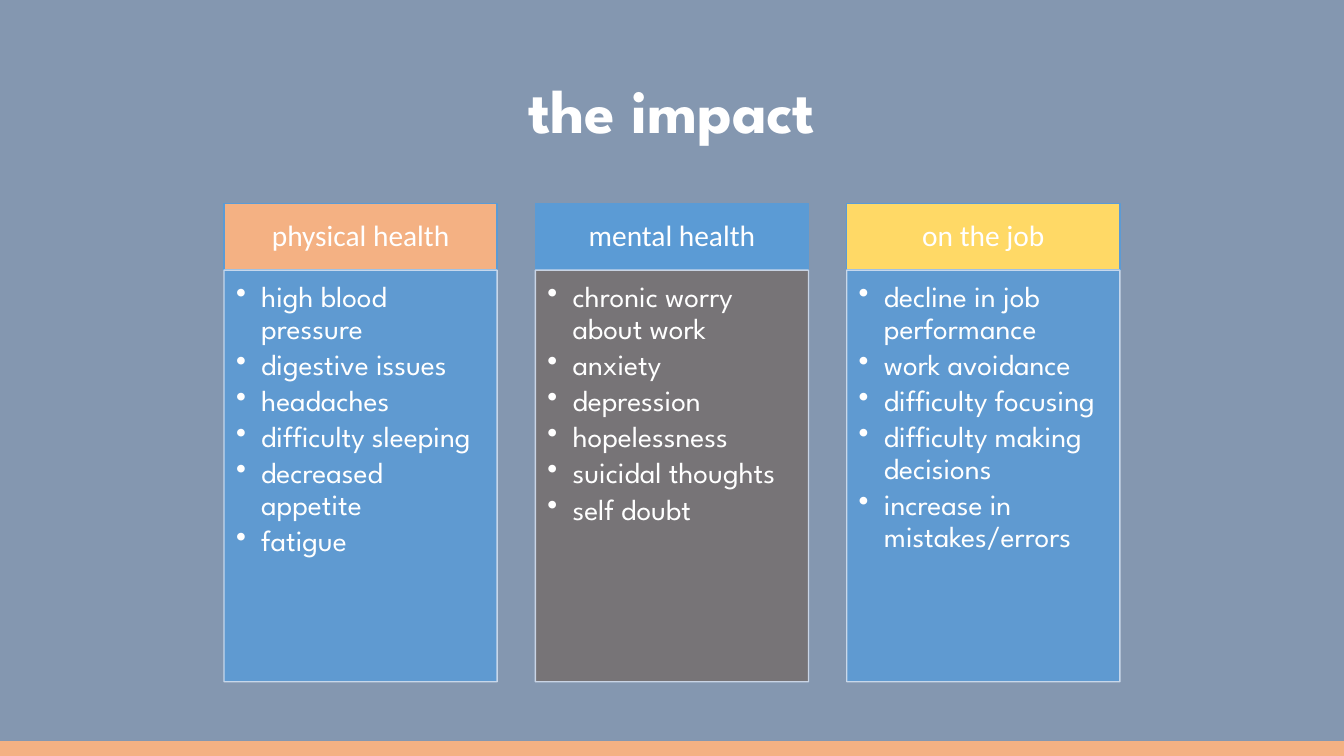
import pptx
import pptx.dml.color
import pptx.enum.shapes
import pptx.enum.text
import pptx.oxml
import pptx.oxml.ns
import pptx.util
from pptx.util import Pt

COLORS = {
    "background": "8497B0",
    "text": "FFFFFF",
    "orange": "F4B183",
    "blue": "5B9BD5",
    "yellow": "FFD966",
    "gray": "767171",
    "pale": "D2DEEF",
}
HEADING_FONT = "Calibri"
BODY_FONT = "League Spartan"

SLIDE_WIDTH, SLIDE_HEIGHT = 960, 540
COLUMN_LEFT, COLUMN_WIDTH, COLUMN_PITCH = 160, 195.1, 222.4
HEADING_TOP, HEADING_HEIGHT = 145.5, 47.5
LIST_HEIGHT = 294
INDENT = 18

IMPACTS = [
    ("physical health", "orange", "blue",
     ["high blood pressure", "digestive issues", "headaches",
      "difficulty sleeping", "decreased appetite", "fatigue"]),
    ("mental health", "blue", "gray",
     ["chronic worry about work", "anxiety", "depression",
      "hopelessness", "suicidal thoughts", "self doubt"]),
    ("on the job", "yellow", "blue",
     ["decline in job performance", "work avoidance", "difficulty focusing",
      "difficulty making decisions", "increase in mistakes/errors"]),
]


def rgb(name):
    return pptx.dml.color.RGBColor.from_string(COLORS[name])


def set_opacity(fill_parent, percent):
    """Make the solid colour under an XML element partly transparent."""
    color = fill_parent.find(pptx.oxml.ns.qn("a:solidFill"))[0]
    color.append(pptx.oxml.parse_xml(
        f'<a:alpha {pptx.oxml.ns.nsdecls("a")} val="{percent * 1000}"/>'))


def add_bullet(paragraph):
    properties = paragraph._p.get_or_add_pPr()
    properties.set("marL", str(Pt(INDENT)))
    properties.set("indent", str(-Pt(INDENT)))
    properties.append(pptx.oxml.parse_xml(
        f'<a:buChar {pptx.oxml.ns.nsdecls("a")} char="•"/>'))


def format_paragraph(paragraph, font_name, size, align, space_after=0, bold=False):
    paragraph.alignment = align
    paragraph.line_spacing = 0.9
    paragraph.space_after = Pt(space_after)
    for run in paragraph.runs:
        run.font.name = font_name
        run.font.size = Pt(size)
        run.font.bold = bold
        run.font.color.rgb = rgb("text")


def set_margins(frame, left, top, right, bottom):
    frame.margin_left, frame.margin_top = Pt(left), Pt(top)
    frame.margin_right, frame.margin_bottom = Pt(right), Pt(bottom)


def add_box(slide, left, top, width, height, fill, line):
    box = slide.shapes.add_shape(
        pptx.enum.shapes.MSO_SHAPE.RECTANGLE,
        Pt(left), Pt(top), Pt(width), Pt(height))
    box.shadow.inherit = False
    box.fill.solid()
    box.fill.fore_color.rgb = rgb(fill)
    box.line.color.rgb = rgb(line)
    box.line.width = Pt(1)
    return box


def add_title(slide, text):
    title = slide.shapes.title
    title.left, title.top = Pt(66), Pt(28.75)
    title.width, title.height = Pt(828), Pt(104.4)
    title.text_frame.text = text
    title.text_frame.vertical_anchor = pptx.enum.text.MSO_ANCHOR.MIDDLE
    format_paragraph(title.text_frame.paragraphs[0], BODY_FONT, 44,
                     pptx.enum.text.PP_ALIGN.CENTER, bold=True)


def add_heading(slide, left, text, fill):
    heading = add_box(slide, left, HEADING_TOP, COLUMN_WIDTH, HEADING_HEIGHT,
                      fill, "blue")
    frame = heading.text_frame
    frame.text = text
    frame.vertical_anchor = pptx.enum.text.MSO_ANCHOR.MIDDLE
    set_margins(frame, 11.5, 6.5, 11.5, 6.5)
    format_paragraph(frame.paragraphs[0], HEADING_FONT, 21,
                     pptx.enum.text.PP_ALIGN.CENTER, space_after=7.35)


def add_list(slide, left, items, fill):
    panel = add_box(slide, left, HEADING_TOP + HEADING_HEIGHT, COLUMN_WIDTH,
                    LIST_HEIGHT, fill, "pale")
    set_opacity(panel._element.spPr, 90)
    set_opacity(panel.line._ln, 90)
    frame = panel.text_frame
    frame.text = "\n".join(items)
    frame.vertical_anchor = pptx.enum.text.MSO_ANCHOR.TOP
    set_margins(frame, 8.6, 8.6, 11.5, 13)
    for paragraph in frame.paragraphs:
        paragraph.level = 1
        format_paragraph(paragraph, BODY_FONT, 21,
                         pptx.enum.text.PP_ALIGN.LEFT, space_after=3.15)
        add_bullet(paragraph)


def main():
    deck = pptx.Presentation()
    deck.slide_width, deck.slide_height = Pt(SLIDE_WIDTH), Pt(SLIDE_HEIGHT)
    slide = deck.slides.add_slide(deck.slide_layouts.get_by_name("Title Only"))
    slide.background.fill.solid()
    slide.background.fill.fore_color.rgb = rgb("background")

    add_title(slide, "the impact")
    add_box(slide, 0, 530, SLIDE_WIDTH, 10, "orange", "orange")
    for column, (heading, heading_fill, list_fill, items) in enumerate(IMPACTS):
        left = COLUMN_LEFT + column * COLUMN_PITCH
        add_heading(slide, left, heading, heading_fill)
        add_list(slide, left, items, list_fill)

    deck.save("out.pptx")


if __name__ == "__main__":
    main()
